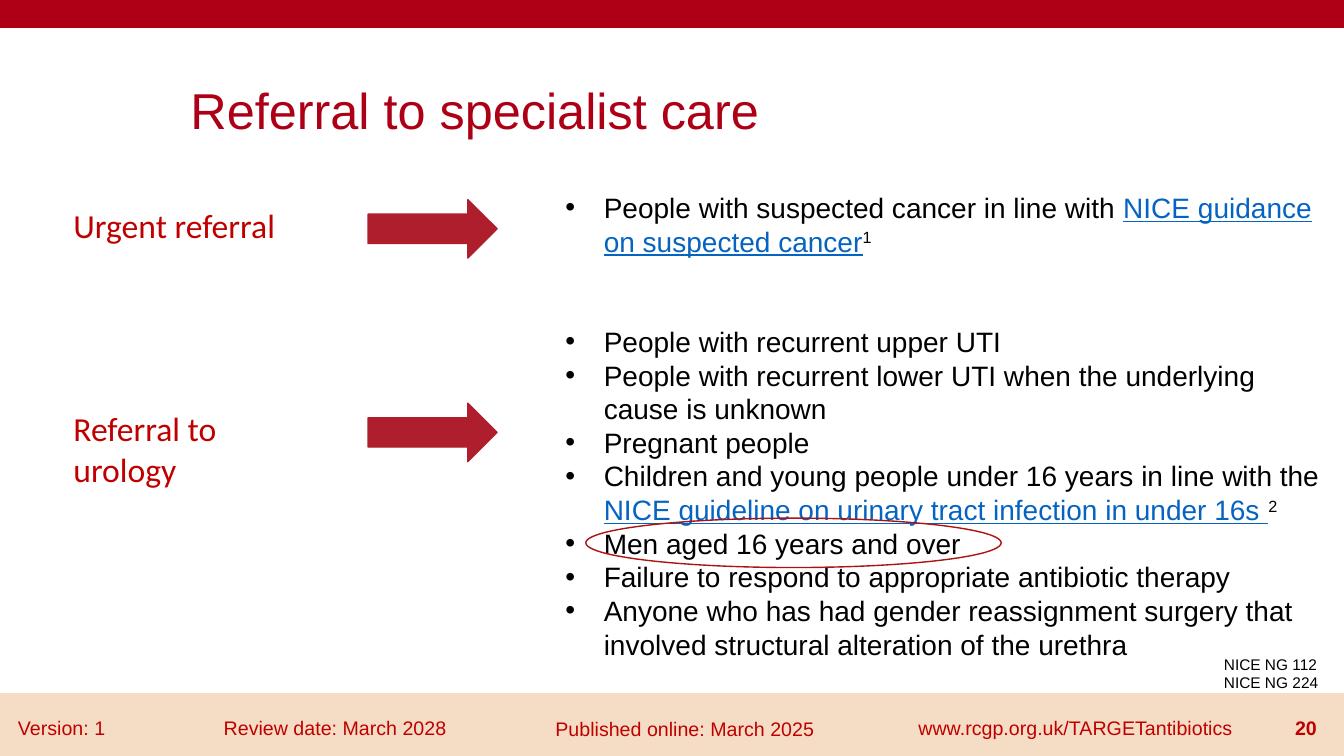
from lxml import etree
from pptx import Presentation
from pptx.dml.color import RGBColor
from pptx.enum.shapes import MSO_SHAPE as Shape
from pptx.enum.text import MSO_ANCHOR as Anchor, PP_ALIGN as Align
from pptx.oxml.ns import qn
from pptx.util import Inches, Pt

WIDE, HIGH = 13.33, 7.5
RED, DARK, BLACK, LINK = "C00000", "AD0016", "000000", "0563C1"


def color(code):
    return RGBColor.from_string(code)


def bullet(par, indent=0.38):
    props = par._p.get_or_add_pPr()
    props.set("marL", str(Inches(indent)))
    props.set("indent", str(-Inches(indent)))
    etree.SubElement(props, qn("a:buFont")).set("typeface", "Arial")
    etree.SubElement(props, qn("a:buChar")).set("char", "•")


def text(slide, box, pars, size=14, face="Arial", ink=RED, bold=False,
         align=Align.LEFT, anchor=Anchor.TOP, spacing=None, dots=False):
    """Each paragraph is a string or a list of (words, kind) pairs."""
    frame = slide.shapes.add_textbox(*map(Inches, box)).text_frame
    frame.word_wrap = True
    frame.vertical_anchor = anchor
    for i, runs in enumerate(pars):
        par = frame.add_paragraph() if i else frame.paragraphs[0]
        if dots:
            bullet(par)
        par.alignment = align
        if spacing:
            par.line_spacing = spacing
        for words, kind in [(runs, "")] if isinstance(runs, str) else runs:
            run = par.add_run()
            run.text = words
            font = run.font
            font.size, font.name, font.bold = Pt(size), face, bold
            font.color.rgb = color(LINK if kind == "link" else ink)
            if kind == "link":
                font.underline = True
            elif kind == "super":
                run._r.get_or_add_rPr().set("baseline", "30000")


def shape(slide, kind, box, fill=None, line=None):
    item = slide.shapes.add_shape(kind, *map(Inches, box))
    item.shadow.inherit = False
    if fill:
        item.fill.solid()
        item.fill.fore_color.rgb = color(fill)
    else:
        item.fill.background()
    item.line.color.rgb = color(line or fill)
    item.line.width = Pt(1)


def header(slide, title):
    shape(slide, Shape.RECTANGLE, (0, -0.01, WIDE, 0.28), DARK)
    text(slide, (1.79, 0.4, 10.62, 1.45), [title], size=36, ink=DARK,
         anchor=Anchor.MIDDLE, spacing=0.9)


def footer(slide, top, notes, page):
    shape(slide, Shape.RECTANGLE, (0, top, WIDE, HIGH - top), "F4DDC4")
    for left, drop, width, words in notes:
        text(slide, (left, top + drop, width, 0.4), [words])
    text(slide, (12.58, top + 0.17, 0.58, 0.4), [page], bold=True,
         align=Align.RIGHT)


def route(slide, top, label, list_top, points):
    """One row: label, arrow, then the bulleted list."""
    text(slide, (0.63, top, 2.6, 0.9), [label], size=24, face="Calibri")
    shape(slide, Shape.RIGHT_ARROW, (3.65, top, 1.28, 0.58), "AF1E2C")
    text(slide, (5.51, list_top, WIDE - 5.51, len(points) * 0.45), points,
         size=20, ink=BLACK, dots=True)


def main():
    deck = Presentation()
    deck.slide_width, deck.slide_height = Inches(WIDE), Inches(HIGH)
    slide = deck.slides.add_slide(deck.slide_layouts[6])
    footer(slide, 6.88, [
        (0.08, 0.17, 1.16, "Version: 1"),
        (2.12, 0.17, 2.78, "Review date: March 2028"),
        (5.41, 0.18, 2.92, "Published online: March 2025"),
        (9.01, 0.17, 3.65, "www.rcgp.org.uk/TARGETantibiotics"),
    ], "20")
    header(slide, "Referral to specialist care")
    route(slide, 1.98, "Urgent referral", 1.84, [
        [("People with suspected cancer in line with ", ""),
         ("NICE guidance on suspected cancer", "link"), ("1", "super")],
    ])
    route(slide, 4, "Referral to urology", 3.17, [
        "People with recurrent upper UTI",
        "People with recurrent lower UTI when the underlying cause is unknown",
        "Pregnant people",
        [("Children and young people under 16 years in line with the ", ""),
         ("NICE guideline on urinary tract infection in under 16s ", "link"),
         ("2", "super")],
        "Men aged 16 years and over",
        "Failure to respond to appropriate antibiotic therapy",
        "Anyone who has had gender reassignment surgery that involved "
        "structural alteration of the urethra",
    ])
    shape(slide, Shape.OVAL, (5.81, 5.14, 4.12, 0.49), line="AD1313")
    text(slide, (12.04, 6.45, 1.25, 0.47), ["NICE NG 112", "NICE NG 224"],
         size=11, ink=BLACK)
    deck.save("out.pptx")


if __name__ == "__main__":
    main()
